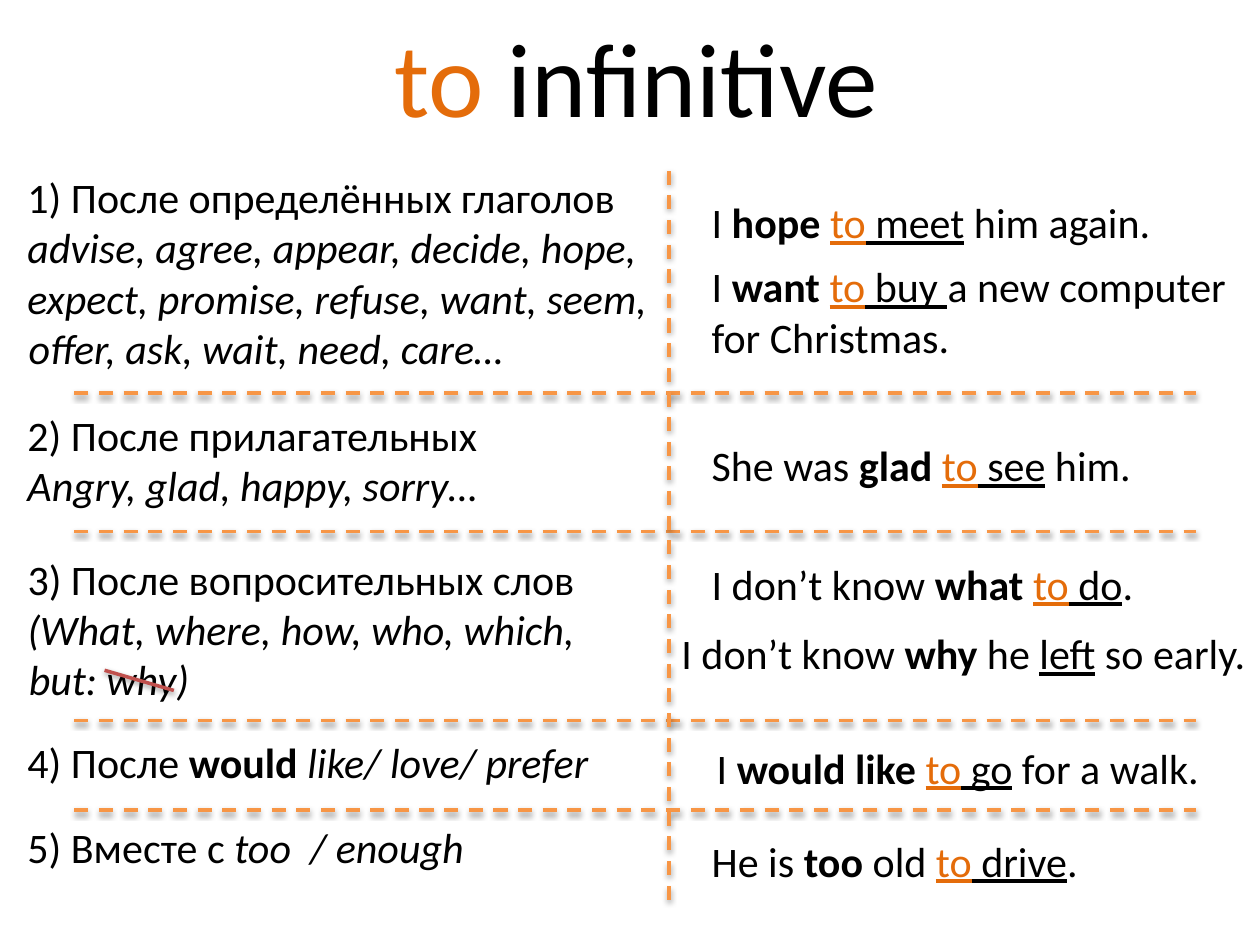
from dataclasses import dataclass

import lxml.etree
import pptx
import pptx.dml.color
import pptx.enum.dml
import pptx.enum.shapes
import pptx.enum.text
import pptx.oxml.ns
import pptx.util

Inches = pptx.util.Inches
Pt = pptx.util.Pt
RGB = pptx.dml.color.RGBColor


@dataclass(frozen=True)
class Theme:
    font: str = "Calibri"
    title_size: int = 60
    body_size: int = 24
    line_width: int = 2
    text: str = "000000"
    accent: str = "E46C0A"
    divider: str = "F79646"
    strike: str = "C0504D"


@dataclass(frozen=True)
class Run:
    text: str
    style: str = "plain"


@dataclass(frozen=True)
class Note:
    left: float
    top: float
    width: float
    height: float
    paragraphs: list[list[Run]]
    wrap: bool = False


@dataclass(frozen=True)
class Stroke:
    start: tuple[float, float]
    end: tuple[float, float]
    color: str
    dashed: bool = True


THEME = Theme()
STYLES = {
    "plain": {},
    "bold": {"bold": True},
    "italic": {"italic": True},
    "underline": {"underline": True},
    "particle": {"underline": True},
    "title particle": {},
}
ACCENTED = {"particle", "title particle"}
RULE_LEFT, EXAMPLE_LEFT = 0.12, 5.55
DIVIDER_LEFT, DIVIDER_RIGHT, COLUMN_X = 0.59, 9.49, 5.31
TO = Run("to", "particle")

TITLE = Note(3.03, 0.05, 4.09, 1.11,
             [[Run("to", "title particle"), Run(" infinitive")]])

RULES = [
    Note(RULE_LEFT, 1.31, 5.14, 1.72, [
        [Run("1) После определённых глаголов")],
        [Run("advise, agree, appear, decide, hope,", "italic")],
        [Run("expect, promise, refuse, want, seem, offer, ask, wait, need, care…", "italic")],
    ], wrap=True),
    Note(RULE_LEFT, 3.2, 3.94, 0.91, [
        [Run("2) После прилагательных")],
        [Run("Angry, glad, happy, sorry…", "italic")],
    ], wrap=True),
    Note(RULE_LEFT, 4.34, 4.65, 1.31, [
        [Run("3) После вопросительных слов")],
        [Run("(What, where, how, who, which, but: why)", "italic")],
    ], wrap=True),
    Note(RULE_LEFT, 5.8, 4.96, 0.5, [
        [Run("4) После "), Run("would ", "bold"), Run("like/ love/ prefer", "italic")],
    ], wrap=True),
    Note(RULE_LEFT, 6.47, 4.96, 0.5, [
        [Run("5) Вместе с "), Run("too  / enough", "italic")],
    ], wrap=True),
]

EXAMPLES = [
    Note(EXAMPLE_LEFT, 1.51, 3.74, 0.5, [
        [Run("I "), Run("hope ", "bold"), TO, Run(" meet", "underline"), Run(" him again.")],
    ]),
    Note(EXAMPLE_LEFT, 2.02, 4.29, 0.91, [
        [Run("I "), Run("want ", "bold"), TO, Run(" buy ", "underline"), Run("a new computer")],
        [Run("for Christmas.")],
    ]),
    Note(EXAMPLE_LEFT, 3.44, 3.54, 0.5, [
        [Run("She was "), Run("glad ", "bold"), TO, Run(" see", "underline"), Run(" him.")],
    ]),
    Note(EXAMPLE_LEFT, 4.38, 3.59, 0.5, [
        [Run("I don’t know "), Run("what ", "bold"), TO, Run(" do", "underline"), Run(".")],
    ]),
    Note(COLUMN_X, 4.93, 4.72, 0.5, [
        [Run("I don’t know "), Run("why", "bold"), Run(" he "), Run("left", "underline"),
         Run(" so early.")],
    ]),
    Note(5.59, 5.84, 4.13, 0.5, [
        [Run("I "), Run("would like ", "bold"), TO, Run(" go", "underline"), Run(" for a walk.")],
    ]),
    Note(EXAMPLE_LEFT, 6.58, 3.12, 0.5, [
        [Run("He is "), Run("too", "bold"), Run(" old "), TO, Run(" drive", "underline"), Run(".")],
    ]),
]

STROKES = [
    Stroke((0.83, 5.32), (1.38, 5.48), THEME.strike, dashed=False),
    *(Stroke((DIVIDER_LEFT, y), (DIVIDER_RIGHT, y), THEME.divider)
      for y in (3.12, 4.22, 5.72, 6.43)),
    Stroke((COLUMN_X, 7.14), (COLUMN_X, 1.31), THEME.divider),
]


def write_note(holder, note: Note, size: int) -> None:
    """Place a text holder and fill it with styled runs."""
    for side in ("left", "top", "width", "height"):
        setattr(holder, side, Inches(getattr(note, side)))
    frame = holder.text_frame
    frame_format = {
        "word_wrap": note.wrap,
        "auto_size": pptx.enum.text.MSO_AUTO_SIZE.SHAPE_TO_FIT_TEXT,
        "vertical_anchor": pptx.enum.text.MSO_ANCHOR.TOP,
    }
    for name, value in frame_format.items():
        setattr(frame, name, value)
    for index, runs in enumerate(note.paragraphs):
        paragraph = frame.add_paragraph() if index else frame.paragraphs[0]
        paragraph.alignment = pptx.enum.text.PP_ALIGN.LEFT
        if note.wrap:  # rules have a slight hanging indent
            properties = paragraph._p.get_or_add_pPr()
            properties.set("marL", str(Inches(0.01)))
            properties.set("indent", str(Inches(-0.01)))
        for part in runs:
            run = paragraph.add_run()
            run.text = part.text
            font_format = {"name": THEME.font, "size": Pt(size), **STYLES[part.style]}
            for name, value in font_format.items():
                setattr(run.font, name, value)
            color = THEME.accent if part.style in ACCENTED else THEME.text
            run.font.color.rgb = RGB.from_string(color)


def add_shadow(connector) -> None:
    """Give a connector a soft shadow straight below it."""
    qn = pptx.oxml.ns.qn
    effects = lxml.etree.SubElement(connector._element.spPr, qn("a:effectLst"))
    shadow = lxml.etree.SubElement(
        effects, qn("a:outerShdw"), blurRad=str(Pt(3.1)), dist=str(Pt(1.6)),
        dir="5400000", rotWithShape="0")
    color = lxml.etree.SubElement(shadow, qn("a:srgbClr"), val="000000")
    lxml.etree.SubElement(color, qn("a:alpha"), val="38000")


def draw_stroke(slide, stroke: Stroke) -> None:
    points = [Inches(value) for value in (*stroke.start, *stroke.end)]
    connector = slide.shapes.add_connector(
        pptx.enum.shapes.MSO_CONNECTOR.STRAIGHT, *points)
    connector.line.width = Pt(THEME.line_width)
    connector.line.color.rgb = RGB.from_string(stroke.color)
    if stroke.dashed:
        connector.line.dash_style = pptx.enum.dml.MSO_LINE.DASH
    add_shadow(connector)


def main() -> None:
    deck = pptx.Presentation()
    deck.slide_width, deck.slide_height = Inches(10), Inches(7.5)
    slide = deck.slides.add_slide(deck.slide_layouts[5])

    # Title
    write_note(slide.shapes.title, TITLE, THEME.title_size)

    # Rules on the left, examples on the right
    for note in RULES + EXAMPLES:
        write_note(slide.shapes.add_textbox(0, 0, 0, 0), note, THEME.body_size)

    # Strike through "why", row dividers and column divider
    for stroke in STROKES:
        draw_stroke(slide, stroke)

    deck.save("out.pptx")


if __name__ == "__main__":
    main()
